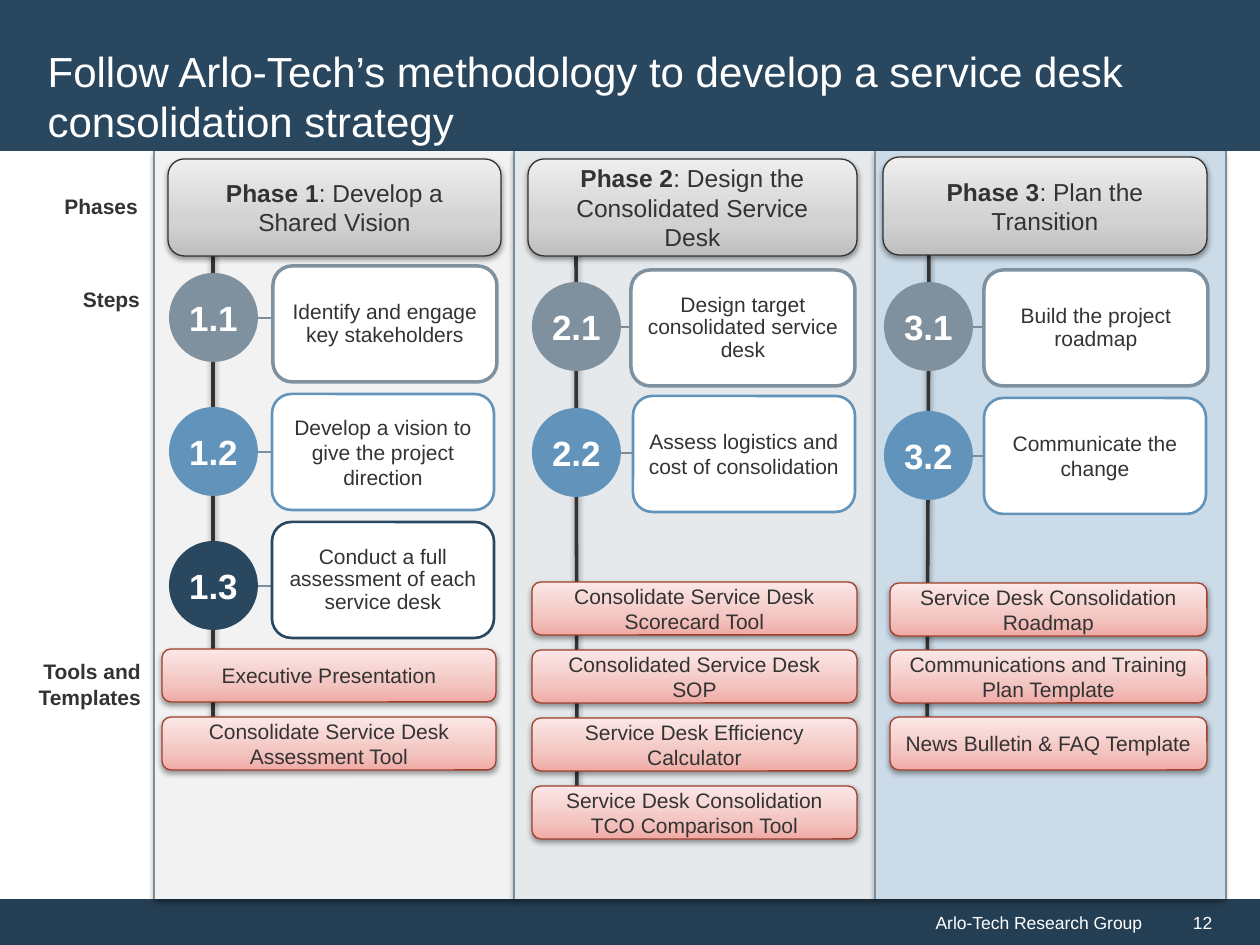
from copy import deepcopy
from pptx import Presentation
from pptx.dml.color import RGBColor
from pptx.enum.shapes import MSO_CONNECTOR, MSO_SHAPE
from pptx.enum.text import MSO_ANCHOR, MSO_AUTO_SIZE, PP_ALIGN
from pptx.oxml import parse_xml
from pptx.oxml.ns import nsdecls, qn
from pptx.util import Pt

PX = 914400 / 126
RECT, ROUND, OVAL = MSO_SHAPE.RECTANGLE, MSO_SHAPE.ROUNDED_RECTANGLE, MSO_SHAPE.OVAL
LEFT, MID, RIGHT = PP_ALIGN.LEFT, PP_ALIGN.CENTER, PP_ALIGN.RIGHT
SHADE = (f'<a:outerShdw {nsdecls("a")} blurRad="40000" dist="20000" dir="5400000" '
         'rotWithShape="0"><a:srgbClr val="000000"><a:alpha val="38000"/></a:srgbClr></a:outerShdw>')
GREY = ["BFBFBF", "D2D2D2", "EEEEEE"]
PINK = ["F0ABA6", "F3C5C1", "FBE8E7"]
INK, WHITE, NAVY = "333333", "FFFFFF", "29475F"

deck = Presentation()
deck.slide_width, deck.slide_height = round(1260 * PX), round(945 * PX)
slide = deck.slides.add_slide(deck.slide_layouts[5])
tree = slide.shapes


def box(kind, area, fill=None, edge=None, wide=0.75, shade=False, runs=(), size=12,
        ink=INK, align=MID, pad=(13, 6, 13, 6), space=1, anchor=MSO_ANCHOR.MIDDLE):
    shape = tree.add_shape(kind, *[round(v * PX) for v in area])
    shape.shadow.inherit = False
    props = shape._element.spPr
    if shade:
        props.find(qn("a:effectLst")).append(parse_xml(SHADE))
    if isinstance(fill, list):
        shape.fill.gradient()
        shape.fill.gradient_angle = 90
        stops = props.find(qn("a:gradFill")).find(qn("a:gsLst"))
        stops.append(deepcopy(stops[-1]))
        for stop, tint, place in zip(shape.fill.gradient_stops, fill, (0, 0.35, 1)):
            stop.color.rgb = RGBColor.from_string(tint)
            stop.position = place
    elif fill:
        shape.fill.solid()
        shape.fill.fore_color.rgb = RGBColor.from_string(fill)
    else:
        shape.fill.background()
    if edge:
        shape.line.color.rgb = RGBColor.from_string(edge)
        shape.line.width = Pt(wide)
    else:
        shape.line.fill.background()
    if runs:
        frame = shape.text_frame
        frame.word_wrap = True
        frame.vertical_anchor = anchor
        (frame.margin_left, frame.margin_top,
         frame.margin_right, frame.margin_bottom) = [round(v * PX) for v in pad]
        para = frame.paragraphs[0]
        para.alignment = align
        para.line_spacing = space
        for text, bold in runs:
            run = para.add_run()
            run.text = text
            run.font.name, run.font.size, run.font.bold = "Arial", Pt(size), bold
            run.font.color.rgb = RGBColor.from_string(ink)


def rule(ends, tint="7B8E9C", wide=0.75, shade=False):
    line = tree.add_connector(MSO_CONNECTOR.STRAIGHT, *[round(v * PX) for v in ends])
    line.line.color.rgb = RGBColor.from_string(tint)
    line.line.width = Pt(wide)
    effects = parse_xml(f'<a:effectLst {nsdecls("a")}/>')
    if shade:
        effects.append(parse_xml(SHADE))
    line._element.spPr.append(effects)


box(RECT, (0, 899, 1155, 47), "243F54", runs=[("Arlo-Tech Research Group", False)],
    size=10, ink=WHITE, align=RIGHT)
box(RECT, (1155, 899, 105, 47), "243F54", runs=[("12", False)],
    size=10, ink=WHITE, align=LEFT, pad=(38, 6, 13, 6))
box(RECT, (0, -4, 1260, 155), NAVY)

title = tree.title
title.left, title.top, title.width, title.height = [round(v * PX) for v in (35, 35, 1188, 121)]
frame = title.text_frame
frame.word_wrap = True
frame.auto_size = MSO_AUTO_SIZE.NONE
frame.vertical_anchor = MSO_ANCHOR.MIDDLE
para = frame.paragraphs[0]
para.alignment = LEFT
run = para.add_run()
run.text = "Follow Arlo-Tech’s methodology to develop a service desk consolidation strategy"
run.font.name, run.font.size = "Arial", Pt(24)
run.font.color.rgb = RGBColor.from_string(WHITE)
title._element.getparent().append(title._element)

ranks = [("7F919F", 2, 0.9, 224, 79), ("6294BB", 1.5, 1, 222, 70), (NAVY, 1.5, 0.9, 222, 70)]
phases = [
    dict(panel=(154, 361, "F2F2F2"), spine=(213, 238, 213, 738), head=(168, 159, 333, 97),
         name=": Develop a Shared Vision", dot=169,
         steps=[(273, 273, 266, "Identify and engage key stakeholders"),
                (407, 272, 394, "Develop a vision to give the project direction"),
                (541, 272, 522, "Conduct a full assessment of each service desk")],
         stack=(162, 649, 334, 68),
         tools=["Executive Presentation", "Consolidate Service Desk Assessment Tool"]),
    dict(panel=(514, 361, "E5E9EC"), spine=(576, 249, 577, 823), head=(528, 159, 329, 97),
         name=": Design the Consolidated Service Desk", dot=532,
         steps=[(282, 631, 270, "Design target consolidated service desk"),
                (408, 633, 396, "Assess logistics and cost of consolidation")],
         stack=(532, 582, 325, 68),
         tools=["Consolidate Service Desk Scorecard Tool", "Consolidated Service Desk SOP",
                "Service Desk Efficiency Calculator",
                "Service Desk Consolidation TCO Comparison Tool"]),
    dict(panel=(875, 350, "CBDBE8"), spine=(929, 255, 927, 753), head=(883, 157, 324, 98),
         name=": Plan the Transition", dot=884,
         steps=[(282, 984, 270, "Build the project roadmap"),
                (411, 984, 398, "Communicate the change")],
         stack=(890, 583, 317, 67),
         tools=["Service Desk Consolidation Roadmap",
                "Communications and Training Plan Template", "News Bulletin & FAQ Template"]),
]

for num, phase in enumerate(phases, 1):
    left, width, tint = phase["panel"]
    box(RECT, (left, 151, width, 748), tint, shade=True)
    dot = phase["dot"]
    for (top, *_), (*_, tick) in zip(phase["steps"], ranks):
        rule((dot + tick, top + 45, dot + tick + 42, top + 45))
    rule(phase["spine"], INK, 2, True)
    box(ROUND, phase["head"], GREY, "323232", shade=True, size=14,
        runs=[(f"Phase {num}", True), (phase["name"], False)])
    for row, (step, rank) in enumerate(zip(phase["steps"], ranks), 1):
        top, left, high, text = step
        tint, wide, space, width, tick = rank
        box(ROUND, (left, high, width, 116), WHITE, tint, wide,
            runs=[(text, False)], pad=(5, 6, 5, 6), space=space)
        box(OVAL, (dot, top, 89, 89), tint, runs=[(f"{num}.{row}", True)],
            size=20, ink=WHITE, pad=(0, 0, 0, 0))
    left, top, width, pitch = phase["stack"]
    for row, text in enumerate(phase["tools"]):
        box(ROUND, (left, top + row * pitch, width, 53), PINK, "A13E2C",
            shade=True, runs=[(text, False)])

for text, area in [("Phases", (40, 188, 111, 38)), ("Steps", (42, 281, 111, 38)),
                   ("Tools and Templates", (25, 653, 129, 63))]:
    box(RECT, area, runs=[(text, True)], align=RIGHT, anchor=MSO_ANCHOR.TOP)

for left in (154, 514, 875, 1226):
    rule((left, 151, left, 899))

deck.save("out.pptx")
